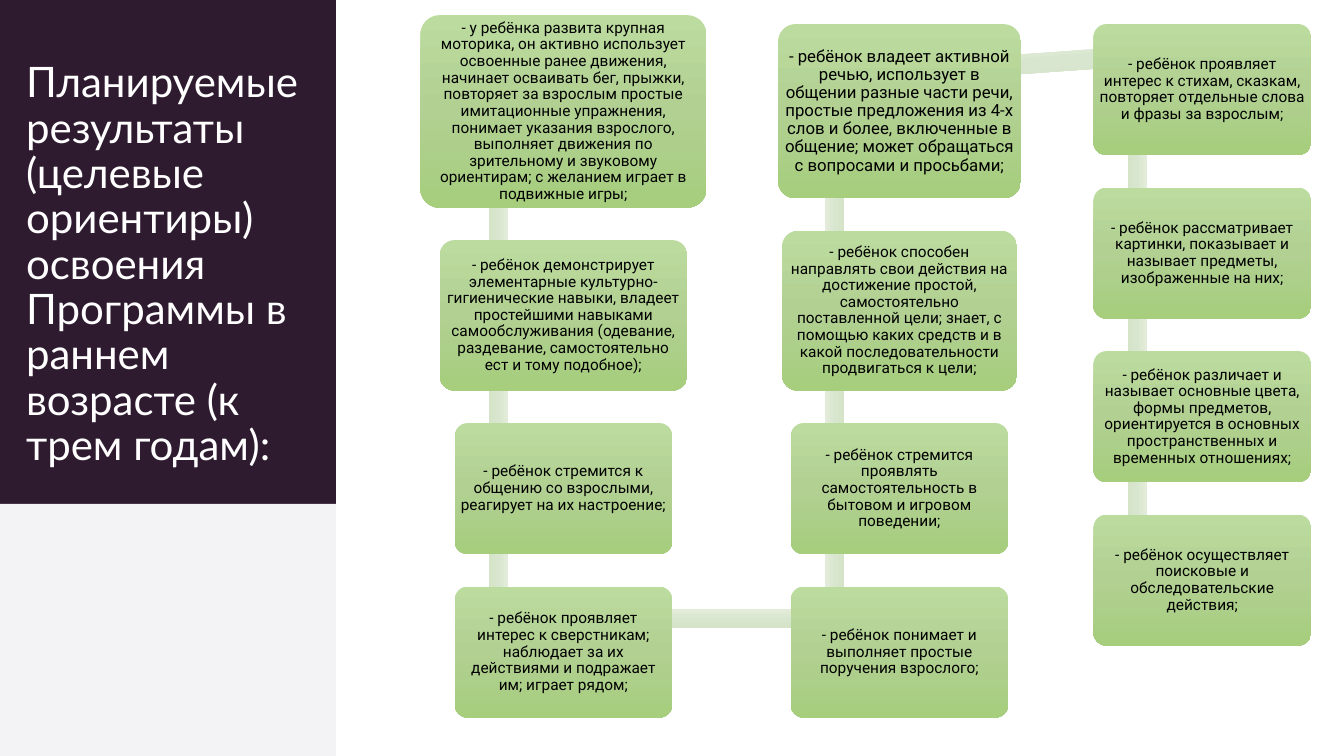
from copy import deepcopy
from math import atan2, degrees, hypot

from pptx import Presentation
from pptx.dml.color import RGBColor
from pptx.enum import shapes, text
from pptx.oxml.ns import qn
from pptx.util import Pt

TITLE = ("Планируемые результаты (целевые ориентиры) освоения Программы "
         "в раннем возрасте (к трем годам):")

# Each column: centre x, top y, cards from top to bottom as (width, height, font size, text)
COLUMNS = [
    (402.5, 10.8, [
        (204.5, 137.5, 11, "- у ребёнка развита крупная моторика, он активно использует освоенные "
         "ранее движения, начинает осваивать бег, прыжки, повторяет за взрослым простые "
         "имитационные упражнения, понимает указания взрослого, выполняет движения по "
         "зрительному и звуковому ориентирам; с желанием играет в подвижные игры;"),
        (177, 107.5, 11, "- ребёнок демонстрирует элементарные культурно-гигиенические навыки, "
         "владеет простейшими навыками самообслуживания (одевание, раздевание, "
         "самостоятельно ест и тому подобное);"),
        (155.6, 93.6, 11, "- ребёнок стремится к общению со взрослыми, реагирует на их настроение;"),
        (155.6, 93.6, 11, "- ребёнок проявляет интерес к сверстникам; наблюдает за их действиями "
         "и подражает им; играет рядом;"),
    ]),
    (642.5, 17.2, [
        (173.5, 124.4, 12, "- ребёнок владеет активной речью, использует в общении разные части "
         "речи, простые предложения из 4-х слов и более, включенные в общение; может "
         "обращаться с вопросами и просьбами;"),
        (168, 114.2, 11, "- ребёнок способен направлять свои действия на достижение простой, "
         "самостоятельно поставленной цели; знает, с помощью каких средств и в какой "
         "последовательности продвигаться к цели;"),
        (155.6, 93.6, 11, "- ребёнок стремится проявлять самостоятельность в бытовом и игровом "
         "поведении;"),
        (155.6, 93.6, 11, "- ребёнок понимает и выполняет простые поручения взрослого;"),
    ]),
    (858.8, 17.2, [
        (155.6, 93.6, 11, "- ребёнок проявляет интерес к стихам, сказкам, повторяет отдельные "
         "слова и фразы за взрослым;"),
        (155.6, 93.6, 11, "- ребёнок рассматривает картинки, показывает и называет предметы, "
         "изображенные на них;"),
        (155.6, 93.6, 11, "- ребёнок различает и называет основные цвета, формы предметов, "
         "ориентируется в основных пространственных и временных отношениях;"),
        (155.6, 93.6, 11, "- ребёнок осуществляет поисковые и обследовательские действия;"),
    ]),
]
CARD_GAP = 23.2
BAR_THICKNESS = 14
BAR_SHIFT_X, BAR_SHIFT_Y = -46.4, -24
CORNER = 0.1
INSET = 3.6

BLACK = RGBColor(0x00, 0x00, 0x00)
WHITE = RGBColor(0xFF, 0xFF, 0xFF)
PLUM = RGBColor(0x2F, 0x1B, 0x30)
PALE_GREY = RGBColor(0xF3, 0xF2, 0xF5)
CARD_GREENS = [RGBColor(0xBC, 0xDB, 0x9E), RGBColor(0xB1, 0xD0, 0x92), RGBColor(0xA6, 0xCE, 0x7D)]
BAR_GREENS = [RGBColor(0xE3, 0xEC, 0xDA), RGBColor(0xD9, 0xE6, 0xCF), RGBColor(0xD5, 0xE3, 0xC8)]


def add_block(slide, kind, left, top, width, height, colors):
    """Add a borderless shape: one colour fills it solid, three make a vertical gradient."""
    shape = slide.shapes.add_shape(kind, Pt(left), Pt(top), Pt(width), Pt(height))
    shape.shadow.inherit = False
    shape.line.fill.background()
    if len(colors) == 1:
        shape.fill.solid()
        shape.fill.fore_color.rgb = colors[0]
        return shape
    shape.fill.gradient()
    shape.fill.gradient_angle = 270
    stop_list = shape._element.spPr.find(".//" + qn("a:gsLst"))
    stop_list.insert(1, deepcopy(stop_list[0]))
    for index, (stop, color) in enumerate(zip(shape.fill.gradient_stops, colors)):
        stop.position = index / 2
        stop.color.rgb = color
    return shape


def write(shape, words, *, size, font, color, align, anchor, margin_x, margin_y):
    frame = shape.text_frame
    frame.word_wrap = True
    frame.vertical_anchor = anchor
    frame.margin_left = frame.margin_right = Pt(margin_x)
    frame.margin_top = frame.margin_bottom = Pt(margin_y)
    paragraph = frame.paragraphs[0]
    paragraph.alignment = align
    paragraph.line_spacing = 0.9
    run = paragraph.add_run()
    run.text = words
    run.font.size = Pt(size)
    run.font.name = font
    run.font.color.rgb = color


def place_cards():
    """Return cards in reading path order: down, up, down."""
    path_cards = []
    for number, (center_x, top, cards) in enumerate(COLUMNS):
        column = []
        for width, height, size, words in cards:
            column.append((center_x, top, width, height, size, words))
            top += height + CARD_GAP
        path_cards += column[::-1] if number % 2 else column
    return path_cards


def add_bar(slide, start, end):
    length = hypot(end[0] - start[0], end[1] - start[1])
    middle_x, middle_y = (start[0] + end[0]) / 2, (start[1] + end[1]) / 2
    bar = add_block(slide, shapes.MSO_SHAPE.RECTANGLE, middle_x - length / 2,
                    middle_y - BAR_THICKNESS / 2, length, BAR_THICKNESS, BAR_GREENS)
    bar.rotation = degrees(atan2(end[1] - start[1], end[0] - start[0])) % 360


def add_card(slide, center_x, top, width, height, size, words):
    card = add_block(slide, shapes.MSO_SHAPE.ROUNDED_RECTANGLE,
                     center_x - width / 2, top, width, height, CARD_GREENS)
    card.adjustments[0] = CORNER
    # Rounded corners already push the text inwards by 0.29 of the radius
    margin = max(0, INSET - 0.29 * CORNER * min(width, height))
    write(card, words, size=size, font="Roboto", color=BLACK, align=text.PP_ALIGN.CENTER,
          anchor=text.MSO_ANCHOR.MIDDLE, margin_x=margin, margin_y=margin)


def main():
    presentation = Presentation()
    presentation.slide_width, presentation.slide_height = Pt(960), Pt(540)
    slide = presentation.slides.add_slide(presentation.slide_layouts[6])

    rectangle = shapes.MSO_SHAPE.RECTANGLE
    add_block(slide, rectangle, 0, 0, 240, 360, [PLUM])
    add_block(slide, rectangle, 0, 360, 240, 180, [PALE_GREY])
    title = slide.shapes.add_textbox(Pt(11.6), Pt(28.8), Pt(211.7), Pt(310.3))
    write(title, TITLE, size=30, font="Lato", color=WHITE, align=text.PP_ALIGN.LEFT,
          anchor=text.MSO_ANCHOR.BOTTOM, margin_x=7.2, margin_y=3.6)

    cards = place_cards()
    nodes = [(card[0] + BAR_SHIFT_X, card[1] + card[3] / 2 + BAR_SHIFT_Y) for card in cards]
    for index, card in enumerate(cards):
        if index + 1 < len(cards):
            add_bar(slide, nodes[index], nodes[index + 1])
        add_card(slide, *card)
    presentation.save("out.pptx")


if __name__ == "__main__":
    main()
